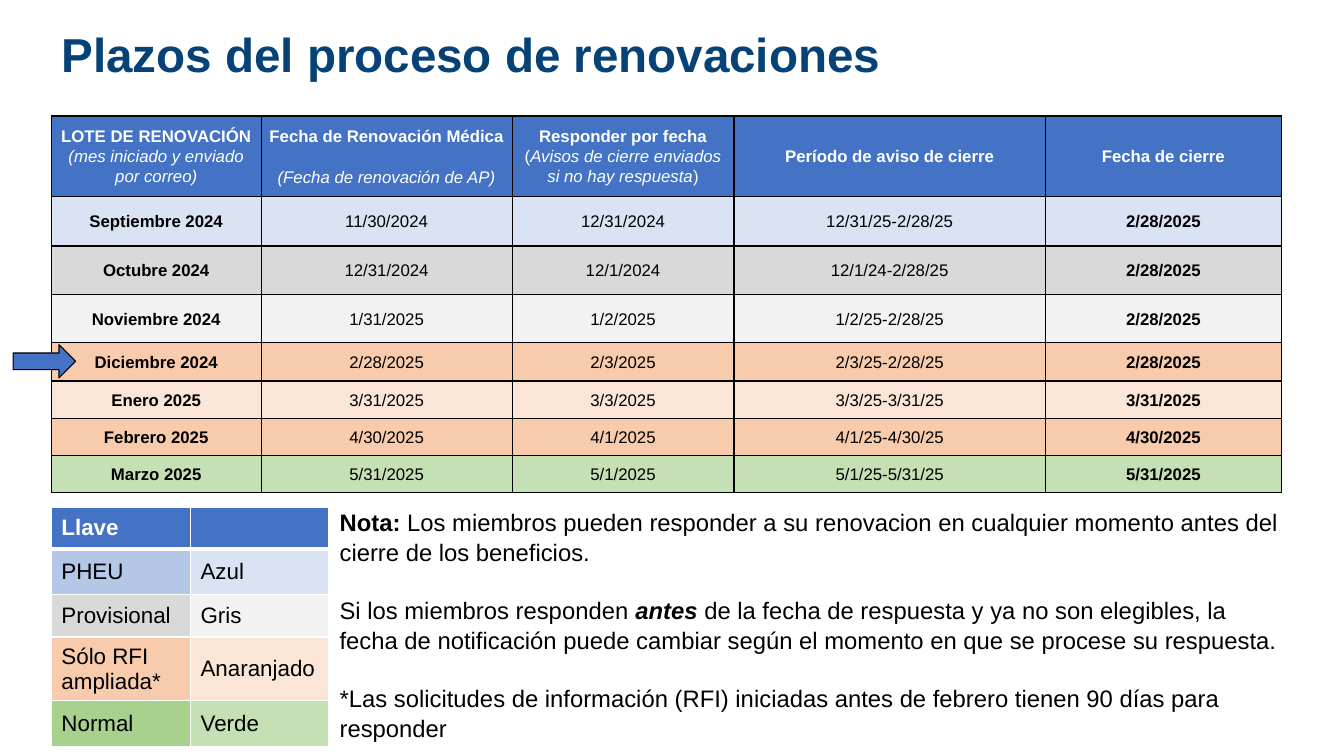
from dataclasses import dataclass

import pptx
import pptx.dml.color
import pptx.enum.shapes
import pptx.enum.text
import pptx.oxml
import pptx.oxml.ns
import pptx.util

Inches = pptx.util.Inches
Pt = pptx.util.Pt
ALIGN = pptx.enum.text.PP_ALIGN
MIDDLE = pptx.enum.text.MSO_ANCHOR.MIDDLE

HEADER_BLUE, BLACK, WHITE = "4472C4", "000000", "FFFFFF"
PALE_BLUE, GRAY, PALE_GRAY = "DAE3F3", "D9D9D9", "F2F2F2"
ORANGE, PALE_ORANGE, GREEN = "F8CBAD", "FBE5D6", "C5E0B4"


@dataclass(frozen=True)
class Run:
    text: str
    bold: bool = False
    italic: bool = False


@dataclass(frozen=True)
class Batch:
    month: str
    renewal: str
    respond_by: str
    notice_period: str
    closing: str
    fill: str
    height: float


@dataclass(frozen=True)
class KeyEntry:
    category: str
    color_name: str
    category_fill: str
    color_fill: str
    height: float


def color(value: str) -> pptx.dml.color.RGBColor:
    return pptx.dml.color.RGBColor.from_string(value)


def write_text(frame, paragraphs: list[list[Run]], *, size: float, ink: str = BLACK,
               align=ALIGN.LEFT, spacing: float = 1.0, gap: float = 0) -> None:
    frame.word_wrap = True
    for index, runs in enumerate(paragraphs):
        paragraph = frame.paragraphs[0] if index == 0 else frame.add_paragraph()
        paragraph.alignment = align
        paragraph.line_spacing = spacing
        paragraph.space_before = Pt(gap if index else 0)
        for part in runs:
            run = paragraph.add_run()
            run.text = part.text
            run.font.name = "Arial"
            run.font.size = Pt(size)
            run.font.bold = part.bold
            run.font.italic = part.italic
            run.font.color.rgb = color(ink)


def style_cell(cell, fill: str, border: str, bottom: float = 1) -> None:
    properties = cell._tc.get_or_add_tcPr()
    for side in ("L", "R", "T", "B"):
        width = Pt(bottom if side == "B" else 1)
        properties.append(pptx.oxml.parse_xml(
            f'<a:ln{side} {pptx.oxml.ns.nsdecls("a")} w="{width}"><a:solidFill>'
            f'<a:srgbClr val="{border}"/></a:solidFill></a:ln{side}>'))
    cell.fill.solid()
    cell.fill.fore_color.rgb = color(fill)
    cell.vertical_anchor = MIDDLE


def add_grid(slide, left: float, top: float, widths: list[float], heights: list[float]):
    table = slide.shapes.add_table(
        len(heights), len(widths), Inches(left), Inches(top),
        Inches(sum(widths)), Inches(sum(heights))).table
    table.first_row = table.horz_banding = False
    for column, width in zip(table.columns, widths):
        column.width = Inches(width)
    for row, height in zip(table.rows, heights):
        row.height = Inches(height)
    return table


@dataclass(frozen=True)
class Heading:
    paragraphs: list[list[Run]]
    gap: float = 0


HEADINGS = [
    Heading([[Run("LOTE DE RENOVACIÓN", bold=True)],
             [Run("(mes iniciado y enviado por correo)", italic=True)]]),
    Heading([[Run("Fecha de Renovación Médica", bold=True)],
             [Run("(Fecha de renovación de AP)", italic=True)]], gap=14.8),
    Heading([[Run("Responder por fecha", bold=True)],
             [Run("("), Run("Avisos de cierre enviados si no hay respuesta", italic=True),
              Run(")")]]),
    Heading([[Run("Período de aviso de cierre", bold=True)]]),
    Heading([[Run("Fecha de cierre", bold=True)]]),
]

BATCHES = [
    Batch("Septiembre 2024", "11/30/2024", "12/31/2024", "12/31/25-2/28/25", "2/28/2025",
          PALE_BLUE, 0.49),
    Batch("Octubre 2024", "12/31/2024", "12/1/2024", "12/1/24-2/28/25", "2/28/2025",
          GRAY, 0.48),
    Batch("Noviembre 2024", "1/31/2025", "1/2/2025", "1/2/25-2/28/25", "2/28/2025",
          PALE_GRAY, 0.48),
    Batch("Diciembre 2024", "2/28/2025", "2/3/2025", "2/3/25-2/28/25", "2/28/2025",
          ORANGE, 0.38),
    Batch("Enero 2025", "3/31/2025", "3/3/2025", "3/3/25-3/31/25", "3/31/2025",
          PALE_ORANGE, 0.37),
    Batch("Febrero 2025", "4/30/2025", "4/1/2025", "4/1/25-4/30/25", "4/30/2025",
          ORANGE, 0.37),
    Batch("Marzo 2025", "5/31/2025", "5/1/2025", "5/1/25-5/31/25", "5/31/2025",
          GREEN, 0.37),
]

KEY = [
    KeyEntry("Llave", "", HEADER_BLUE, HEADER_BLUE, 0.42),
    KeyEntry("PHEU", "Azul", "B4C7E7", PALE_BLUE, 0.45),
    KeyEntry("Provisional", "Gris", GRAY, PALE_GRAY, 0.42),
    KeyEntry("Sólo RFI ampliada*", "Anaranjado", ORANGE, PALE_ORANGE, 0.62),
    KeyEntry("Normal", "Verde", "A9D18E", GREEN, 0.45),
]

NOTES = [
    [Run("Nota: ", bold=True),
     Run("Los miembros pueden responder a su renovacion en cualquier momento antes del "
         "cierre de los beneficios.")],
    [Run("Si los miembros responden "), Run("antes", bold=True, italic=True),
     Run(" de la fecha de respuesta y ya no son elegibles, la fecha de notificación puede "
         "cambiar según el momento en que se procese su respuesta.")],
    [Run("*Las solicitudes de información (RFI) iniciadas antes de febrero tienen 90 días "
         "para responder")],
]


def add_title(slide) -> None:
    title = slide.shapes.title
    title.left, title.top, title.width, title.height = map(Inches, (0.51, 0.2, 12.58, 0.67))
    title.text_frame.vertical_anchor = MIDDLE
    write_text(title.text_frame, [[Run("Plazos del proceso de renovaciones", bold=True)]],
               size=34, ink="064276")


def add_deadlines(slide) -> None:
    table = add_grid(slide, 0.51, 1.15, [2.08, 2.49, 2.2, 3.09, 2.34],
                     [0.8] + [batch.height for batch in BATCHES])
    rows = [(HEADINGS, HEADER_BLUE, WHITE)]
    for batch in BATCHES:
        dates = [Run(batch.month, bold=True), Run(batch.renewal), Run(batch.respond_by),
                 Run(batch.notice_period), Run(batch.closing, bold=True)]
        rows.append(([Heading([[date]]) for date in dates], batch.fill, BLACK))
    for row, (entries, fill, ink) in zip(table.rows, rows):
        for cell, entry in zip(row.cells, entries):
            style_cell(cell, fill, BLACK)
            cell.margin_left = cell.margin_right = Inches(0.07)
            cell.margin_top = cell.margin_bottom = 0
            write_text(cell.text_frame, entry.paragraphs, size=12, ink=ink,
                       align=ALIGN.CENTER, spacing=1.07, gap=entry.gap)


def add_notes(slide) -> None:
    notes = slide.shapes.add_textbox(Inches(3.27), Inches(5), Inches(9.57), Inches(2.39))
    notes.text_frame.vertical_anchor = MIDDLE
    write_text(notes.text_frame, NOTES, size=17, spacing=1.05, gap=20)


def add_current_batch_arrow(slide) -> None:
    arrow = slide.shapes.add_shape(pptx.enum.shapes.MSO_SHAPE.RIGHT_ARROW, Inches(0.13),
                                   Inches(3.42), Inches(0.62), Inches(0.33))
    arrow.shadow.inherit = False
    arrow.fill.solid()
    arrow.fill.fore_color.rgb = color(HEADER_BLUE)
    arrow.line.color.rgb = color(BLACK)
    arrow.line.width = Pt(0.75)


def add_key(slide) -> None:
    table = add_grid(slide, 0.51, 5.03, [1.38, 1.37], [entry.height for entry in KEY])
    for index, (row, entry) in enumerate(zip(table.rows, KEY)):
        header = index == 0
        sides = [(entry.category, entry.category_fill), (entry.color_name, entry.color_fill)]
        for cell, (label, fill) in zip(row.cells, sides):
            style_cell(cell, fill, WHITE, bottom=3 if header else 1)
            if label:
                write_text(cell.text_frame, [[Run(label, bold=header)]], size=16,
                           ink=WHITE if header else BLACK)


def main() -> None:
    deck = pptx.Presentation()
    deck.slide_width, deck.slide_height = Inches(13.33), Inches(7.5)
    slide = deck.slides.add_slide(deck.slide_layouts[5])
    add_title(slide)
    add_deadlines(slide)
    add_notes(slide)
    add_current_batch_arrow(slide)
    add_key(slide)
    deck.save("out.pptx")


if __name__ == "__main__":
    main()
